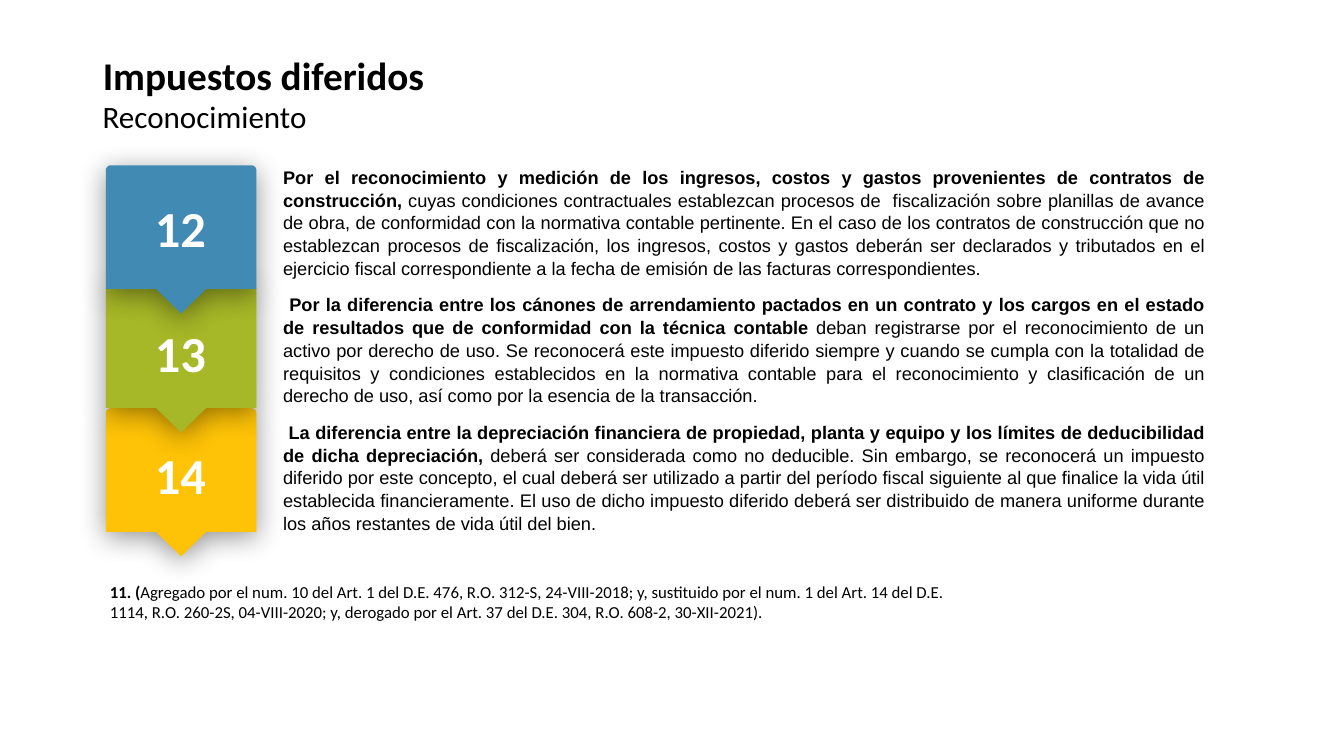
from math import cos, pi, sin

from lxml.etree import SubElement
from pptx import Presentation
from pptx.dml.color import RGBColor as Rgb
from pptx.enum.text import MSO_ANCHOR as Anchor, MSO_AUTO_SIZE as Fit, PP_ALIGN as Align
from pptx.oxml.ns import qn
from pptx.util import Inches, Pt

WIDE, HIGH = Inches(13.33), Inches(7.5)
COLORS = {"blue": "418AB3", "green": "A6B727", "gold": "FEC306",
          "ink": "000000", "white": "FFFFFF"}

# Boxes are left, top, width, height in percent of the slide.
TITLE = (6.9, 6.8, 49.4, 8.53)
SUB = (6.9, 13.33, 42.16, 5.2)
NOTE = (7.43, 76.27, 64.82, 6.67)
BODY = (20.33, 21.2, 70, 15.87)
BODY_STEP = 16.87
BADGE = (7.88, 11.2, 19.6)  # left, width, height
LABEL = (9.08, 8.7, 9.47)

# number, color, badge top, label top, bold lead, rest
STEPS = [
    ("12", "blue", 21.87, 25.47,
     "Por el reconocimiento y medición de los ingresos, costos y gastos "
     "provenientes de contratos de construcción, ",
     "cuyas condiciones contractuales establezcan procesos de  fiscalización sobre "
     "planillas de avance de obra, de conformidad con la normativa contable "
     "pertinente. En el caso de los contratos de construcción que no establezcan "
     "procesos de fiscalización, los ingresos, costos y gastos deberán ser declarados "
     "y tributados en el ejercicio fiscal correspondiente a la fecha de emisión de "
     "las facturas correspondientes."),
    ("13", "green", 37.6, 42,
     " Por la diferencia entre los cánones de arrendamiento pactados en un contrato "
     "y los cargos en el estado de resultados que de conformidad con la técnica "
     "contable ",
     "deban registrarse por el reconocimiento de un activo por derecho de uso. Se "
     "reconocerá este impuesto diferido siempre y cuando se cumpla con la totalidad "
     "de requisitos y condiciones establecidos en la normativa contable para el "
     "reconocimiento y clasificación de un derecho de uso, así como por la esencia "
     "de la transacción."),
    ("14", "gold", 54, 58.13,
     " La diferencia entre la depreciación financiera de propiedad, planta y equipo "
     "y los límites de deducibilidad de dicha depreciación, ",
     "deberá ser considerada como no deducible. Sin embargo, se reconocerá un "
     "impuesto diferido por este concepto, el cual deberá ser utilizado a partir del "
     "período fiscal siguiente al que finalice la vida útil establecida "
     "financieramente. El uso de dicho impuesto diferido deberá ser distribuido de "
     "manera uniforme durante los años restantes de vida útil del bien."),
]
NOTE_TEXT = ("Agregado por el num. 10 del Art. 1 del D.E. 476, R.O. 312-S, 24-VIII-2018; "
             "y, sustituido por el num. 1 del Art. 14 del D.E. 1114, R.O. 260-2S, "
             "04-VIII-2020; y, derogado por el Art. 37 del D.E. 304, R.O. 608-2, "
             "30-XII-2021).")


def scale(box):
    """Turn percent shares into slide lengths."""
    return [round(part * side / 100) for part, side in zip(box, (WIDE, HIGH) * 2)]


def assign(target, **values):
    for name, value in values.items():
        setattr(target, name, value)


def write(shape, runs, size, font="Calibri", color="ink", align=Align.LEFT,
          space=1.0, anchor=Anchor.TOP):
    """Fill a shape with one paragraph of (text, bold) runs."""
    frame = shape.text_frame
    assign(frame, word_wrap=True, auto_size=Fit.NONE, vertical_anchor=anchor)
    par = frame.paragraphs[0]
    assign(par, alignment=align, line_spacing=space)
    for text, bold in runs:
        run = par.add_run()
        run.text = text
        assign(run.font, name=font, size=Pt(size), bold=bold)
        run.font.color.rgb = Rgb.from_string(COLORS[color])


def add_text(slide, box, runs, size, **style):
    write(slide.shapes.add_textbox(*scale(box)), runs, size, **style)


def cast_shadow(shape):
    shape.shadow.inherit = False
    effects = shape._element.spPr.find(qn("a:effectLst"))
    shade = SubElement(effects, qn("a:outerShdw"), blurRad=str(Pt(20)),
                       dist=str(Pt(4)), dir="5400000", algn="t", rotWithShape="0")
    black = SubElement(shade, qn("a:srgbClr"), val=COLORS["ink"])
    SubElement(black, qn("a:alpha"), val="42000")


def add_badge(slide, box, color):
    """Draw a tab with round top corners and a pointer below."""
    left, top, width, height = scale(box)
    right, mid = left + width, left + width / 2
    base, tip = top + height * 0.835, width / 6
    curve = Inches(0.05)
    turns = [pi * step / 12 for step in range(7)]
    corners = [(left + curve * (1 - cos(t)), top + curve * (1 - sin(t))) for t in turns]
    corners += [(right - curve * (1 - sin(t)), top + curve * (1 - cos(t))) for t in turns]
    lower = [(right, base), (mid + tip, base), (mid, top + height),
             (mid - tip, base), (left, base)]
    first, *others = [(round(x), round(y)) for x, y in corners + lower]
    form = slide.shapes.build_freeform(*first)
    form.add_line_segments(others, close=True)
    badge = form.convert_to_shape()
    badge.fill.solid()
    badge.fill.fore_color.rgb = Rgb.from_string(COLORS[color])
    badge.line.fill.background()
    cast_shadow(badge)


def add_head(slide):
    title = slide.shapes.title
    assign(title, **dict(zip(("left", "top", "width", "height"), scale(TITLE))))
    write(title, [("Impuestos diferidos", True)], 28, space=0.9)
    add_text(slide, SUB, [("Reconocimiento", False)], 22.2, space=0.7,
             anchor=Anchor.MIDDLE)


def add_steps(slide):
    left, width, height = BADGE
    for _, color, top, *_ in reversed(STEPS):
        add_badge(slide, (left, top, width, height), color)
    left, width, height = LABEL
    x, y, wide, high = BODY
    for row, (number, _, _, top, lead, rest) in enumerate(STEPS):
        add_text(slide, (left, top, width, height), [(number, True)], 36,
                 color="white", align=Align.CENTER)
        add_text(slide, (x, y + row * BODY_STEP, wide, high),
                 [(lead, True), (rest, False)], 13, font="Arial",
                 align=Align.JUSTIFY, space=1.04)


def main():
    deck = Presentation()
    assign(deck, slide_width=WIDE, slide_height=HIGH)
    slide = deck.slides.add_slide(deck.slide_layouts[5])
    add_head(slide)
    add_steps(slide)
    add_text(slide, NOTE, [("11. (", True), (NOTE_TEXT, False)], 12)
    deck.save("out.pptx")


if __name__ == "__main__":
    main()
